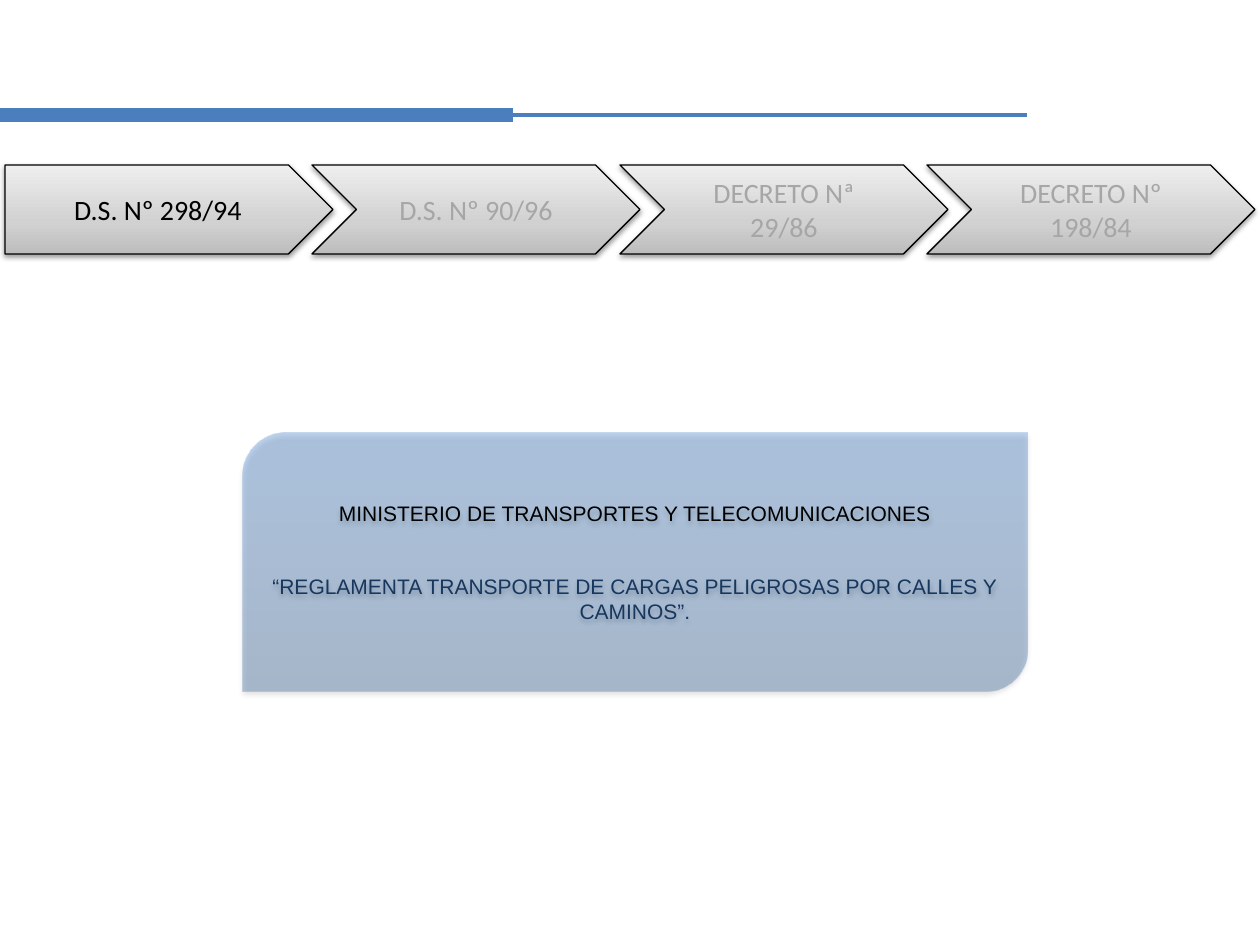
"""Build a slide with a four-step decree chevron bar and a ministry panel."""
from lxml import etree
from pptx import Presentation
from pptx.dml.color import RGBColor
from pptx.enum.shapes import MSO_CONNECTOR, MSO_SHAPE
from pptx.enum.text import MSO_ANCHOR, PP_ALIGN
from pptx.oxml.ns import qn
from pptx.util import Pt

PENTAGON, CHEVRON = MSO_SHAPE.PENTAGON, MSO_SHAPE.CHEVRON
PANEL = MSO_SHAPE.ROUND_2_DIAG_RECTANGLE
STRAIGHT = MSO_CONNECTOR.STRAIGHT
MIDDLE, CENTER = MSO_ANCHOR.MIDDLE, PP_ALIGN.CENTER
PX = 914400 / 126
GREYS = [(0, "BDBDBD"), (35, "D1D1D1"), (100, "EEEEEE")]
BLUES = [(0, "2F5F99"), (80, "3D7CC7"), (100, "3A7CCB")]


def add_color(parent, color, alpha):
    clr = etree.SubElement(parent, qn("a:srgbClr"), val=color)
    etree.SubElement(clr, qn("a:alpha"), val=str(alpha * 1000))


def add_box(kind, box, stops, alpha, shade, dist, font, size, paragraphs):
    sp = s.shapes.add_shape(kind, *[round(v * PX) for v in box])
    sp.fill.gradient()
    sp.fill.gradient_angle = 90
    gs_list = sp._element.spPr.find(".//" + qn("a:gsLst"))
    for gs in list(gs_list):
        gs_list.remove(gs)
    for pos, color in stops:
        gs = etree.SubElement(gs_list, qn("a:gs"), pos=str(pos * 1000))
        add_color(gs, color, alpha)
    sp.line.fill.background()
    sp.shadow.inherit = False
    effects = sp._element.spPr.find(qn("a:effectLst"))
    shadow = etree.SubElement(effects, qn("a:outerShdw"), blurRad=str(Pt(3.1)),
                              dist=str(Pt(dist)), dir="5400000", rotWithShape="0")
    add_color(shadow, "000000", shade)
    tf = sp.text_frame
    tf.word_wrap = True
    tf.vertical_anchor = MIDDLE
    for i, (text, color) in enumerate(paragraphs):
        p = tf.add_paragraph() if i else tf.paragraphs[0]
        p.alignment = CENTER
        if i:
            p.space_before = Pt(27)
        r = p.add_run()
        r.text = text
        r.font.name = font
        r.font.size = Pt(size)
        r.font.color.rgb = RGBColor.from_string(color)
    return sp


prs = Presentation()
prs.slide_width, prs.slide_height = round(1260 * PX), round(945 * PX)
s = prs.slides.add_slide(prs.slide_layouts[6])

for right, width in [(1027, 1.75), (513, 8)]:
    y = round(115 * PX)
    rule = s.shapes.add_connector(STRAIGHT, 0, y, round(right * PX), y)
    rule.line.color.rgb = RGBColor.from_string("4B7EBC")
    rule.line.width = Pt(width)
    etree.SubElement(rule._element.spPr, qn("a:effectLst"))

decrees = ["D.S. Nº 298/94", "D.S. Nº 90/96", "DECRETO Nª 29/86", "DECRETO Nº 198/84"]
for i, decree in enumerate(decrees):
    sp = add_box(CHEVRON if i else PENTAGON, (5 + i * 615 // 2, 165, 328, 89),
                 GREYS, 100, 38, 1.6, "Calibri", 16,
                 [(decree, "A6A6A6" if i else "000000")])
    sp.line.color.rgb = RGBColor.from_string("000000")
    sp.line.width = Pt(0.75)

add_box(PANEL, (243, 433, 784, 258), BLUES, 33, 35, 1.8, "Arial", 12, [
    ("MINISTERIO DE TRANSPORTES Y TELECOMUNICACIONES", "000000"),
    ("“REGLAMENTA TRANSPORTE DE CARGAS PELIGROSAS POR CALLES Y CAMINOS”.", "17375E"),
])

prs.save("out.pptx")
